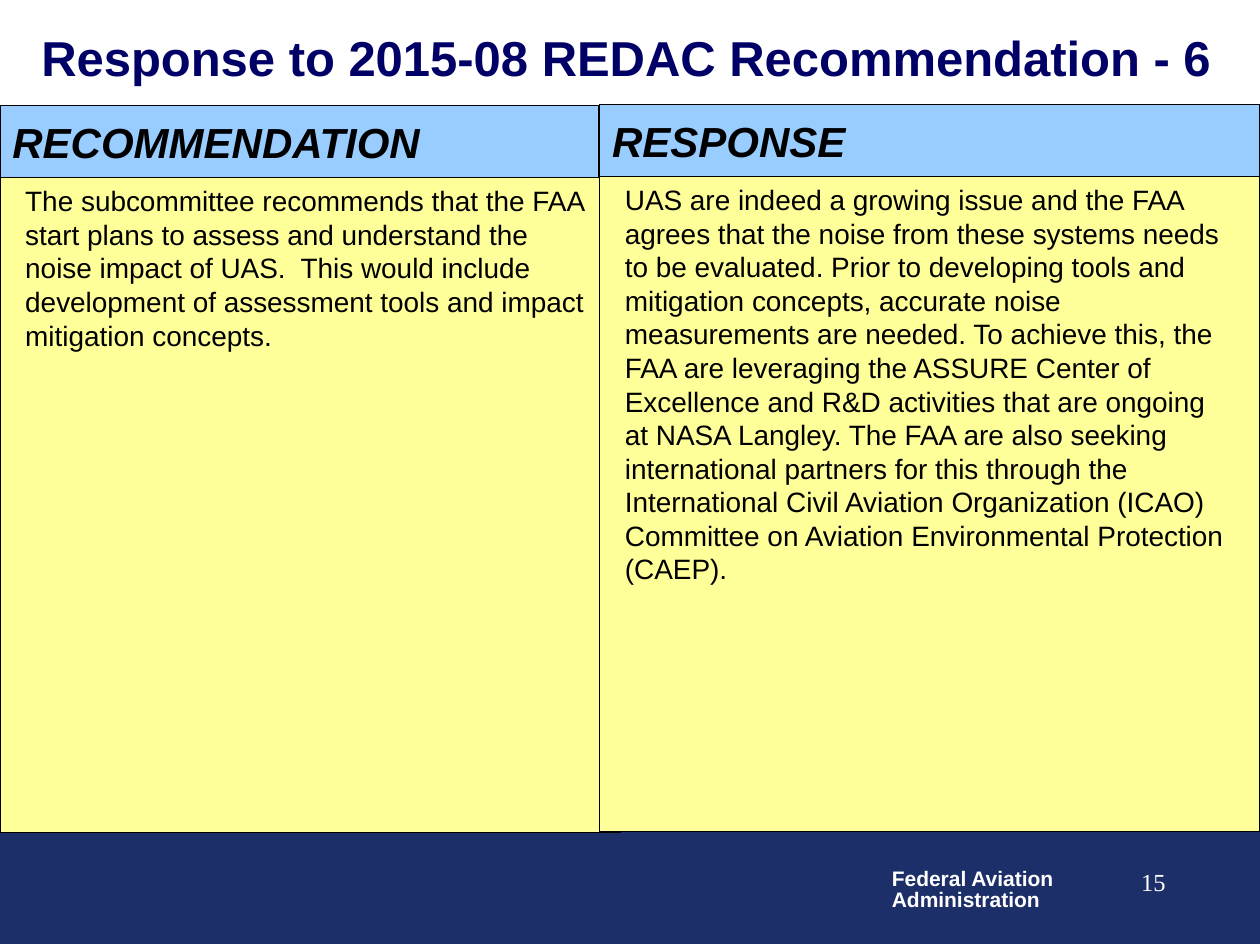
from dataclasses import dataclass

from pptx import Presentation
from pptx.dml.color import RGBColor
from pptx.enum.shapes import MSO_SHAPE
from pptx.enum.text import MSO_ANCHOR, PP_ALIGN
from pptx.util import Inches, Pt

RECT = MSO_SHAPE.RECTANGLE
TOP, MIDDLE = MSO_ANCHOR.TOP, MSO_ANCHOR.MIDDLE
LEFT, RIGHT = PP_ALIGN.LEFT, PP_ALIGN.RIGHT


@dataclass(frozen=True)
class Theme:
    navy: str = "1D2F68"
    title: str = "000066"
    header: str = "99CCFF"
    panel: str = "FFFF99"
    black: str = "000000"
    white: str = "FFFFFF"
    font: str = "Arial"
    number_font: str = "Times New Roman"
    title_size: int = 28
    header_size: int = 24
    body_size: int = 16
    number_size: int = 14
    footer_size: int = 12


theme = Theme()
prs = Presentation()
prs.slide_width, prs.slide_height = Inches(10), Inches(7.5)
s = prs.slides.add_slide(prs.slide_layouts[6])


def add_rect(box, fill, line):
    sp = s.shapes.add_shape(RECT, *map(Inches, box))
    sp.shadow.inherit = False
    sp.fill.solid()
    sp.fill.fore_color.rgb = RGBColor.from_string(fill)
    sp.line.color.rgb = RGBColor.from_string(line)
    sp.line.width = Pt(0.75)
    return sp


def write(sp, lines, size, color, font=theme.font, bold=False, italic=False,
          align=LEFT, anchor=TOP, wrap=True, inset=0.1, spacing=None):
    """Fill a shape with one paragraph per line, all in the same style."""
    tf = sp.text_frame
    tf.word_wrap = wrap
    tf.vertical_anchor = anchor
    tf.margin_left = tf.margin_right = Inches(inset)
    for i, line in enumerate(lines):
        p = tf.paragraphs[0] if i == 0 else tf.add_paragraph()
        p.alignment = align
        p.line_spacing = spacing
        r = p.add_run()
        r.text = line
        r.font.name = font
        r.font.size = Pt(size)
        r.font.bold = bold
        r.font.italic = italic
        r.font.color.rgb = RGBColor.from_string(color)


# Footer band
add_rect((0, 6.6, 10, 0.89), theme.navy, theme.navy)
agency = s.shapes.add_textbox(Inches(6.98), Inches(6.85), Inches(1.5), Inches(0.44))
write(agency, ["Federal Aviation", "Administration"], theme.footer_size,
      theme.white, bold=True, wrap=False, spacing=0.85)

# Body panels, then the headers above them
recommendation = (
    "The subcommittee recommends that the FAA start plans to assess and "
    "understand the noise impact of UAS.  This would include development of "
    "assessment tools and impact mitigation concepts."
)
response = (
    "UAS are indeed a growing issue and the FAA agrees that the noise from "
    "these systems needs to be evaluated. Prior to developing tools and "
    "mitigation concepts, accurate noise measurements are needed. To achieve "
    "this, the FAA are leveraging the ASSURE Center of Excellence and R&D "
    "activities that are ongoing at NASA Langley. The FAA are also seeking "
    "international partners for this through the International Civil Aviation "
    "Organization (ICAO) Committee on Aviation Environmental Protection (CAEP)."
)
panels = [
    ((0, 1.41, 4.92, 5.2), recommendation),
    ((4.76, 1.4, 5.24, 5.2), response),
]
for box, text in panels:
    write(add_rect(box, theme.panel, theme.black), [text], theme.body_size,
          theme.black, inset=0.2)

headers = [
    ((0, 0.84, 4.75, 0.57), "RECOMMENDATION"),
    ((4.76, 0.83, 5.24, 0.57), "RESPONSE"),
]
for box, text in headers:
    write(add_rect(box, theme.header, theme.black), [text], theme.header_size,
          theme.black, bold=True, italic=True, anchor=MIDDLE, wrap=False)

# Title and slide number
title = s.shapes.add_textbox(Inches(0.23), Inches(0.12), Inches(9.64), Inches(0.67))
write(title, ["Response to 2015-08 REDAC Recommendation - 6"], theme.title_size,
      theme.title, bold=True, anchor=MIDDLE)
number = s.shapes.add_textbox(Inches(7.27), Inches(6.83), Inches(2.08), Inches(0.5))
write(number, ["15"], theme.number_size, theme.white, font=theme.number_font,
      align=RIGHT)

prs.save("out.pptx")
